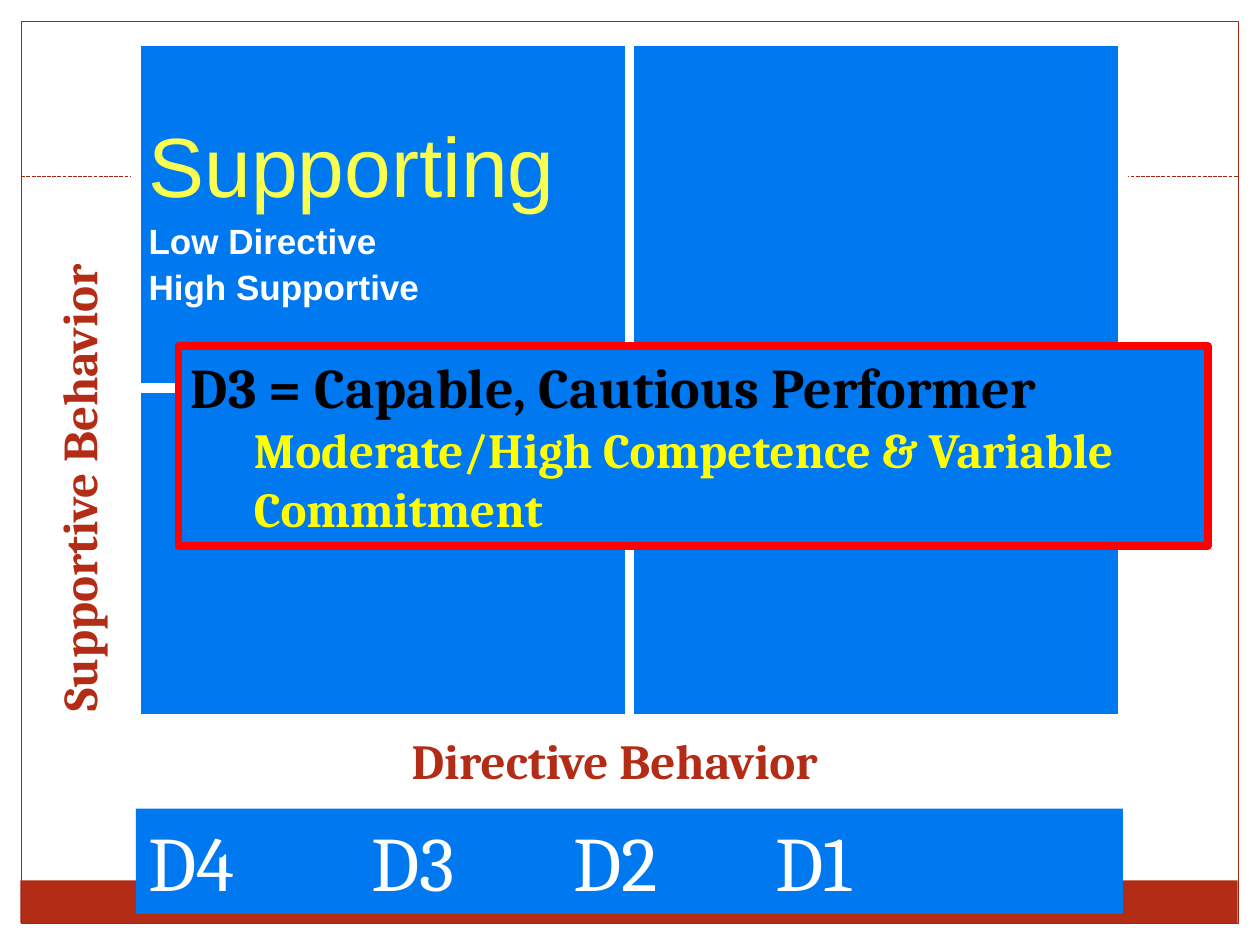
from lxml import etree
from pptx import Presentation
from pptx.dml.color import RGBColor
from pptx.enum.dml import MSO_LINE
from pptx.enum.shapes import MSO_CONNECTOR, MSO_SHAPE
from pptx.enum.text import MSO_ANCHOR, PP_ALIGN
from pptx.oxml.ns import qn
from pptx.util import Cm, Pt

WHITE = RGBColor(0xFF, 0xFF, 0xFF)
BLACK = RGBColor(0x00, 0x00, 0x00)
BLUE = RGBColor(0x00, 0x78, 0xF0)
RUST = RGBColor(0xB3, 0x2C, 0x16)
DARK_RUST = RGBColor(0x9E, 0x27, 0x13)
RED = RGBColor(0xFF, 0x00, 0x00)
YELLOW = RGBColor(0xFF, 0xFF, 0x00)
PALE_YELLOW = RGBColor(0xFA, 0xFE, 0x4E)

RECTANGLE = MSO_SHAPE.RECTANGLE
STRAIGHT = MSO_CONNECTOR.STRAIGHT
DASHED = MSO_LINE.SQUARE_DOT
LEFT = PP_ALIGN.LEFT
TOP = MSO_ANCHOR.TOP
MIDDLE = MSO_ANCHOR.MIDDLE

SERIF = "Cambria"
SANS = "Arial"
BLANK_LAYOUT = 6


class SlideBuilder:
    """Holds the style and the slide; positions and sizes are in centimetres."""

    def __init__(self, slide):
        self.slide = slide

    def set_text(self, paragraph, text, size, color, font=SERIF, bold=False):
        paragraph.text = text
        paragraph.alignment = LEFT
        paragraph.font.name = font
        paragraph.font.size = Pt(size)
        paragraph.font.bold = bold
        paragraph.font.color.rgb = color

    def rectangle(self, left, top, width, height, fill=None, line=None, line_width=0.75):
        shape = self.slide.shapes.add_shape(
            RECTANGLE, Cm(left), Cm(top), Cm(width), Cm(height))
        shape.shadow.inherit = False
        if fill is None:
            shape.fill.background()
        else:
            shape.fill.solid()
            shape.fill.fore_color.rgb = fill
        if line is None:
            shape.line.fill.background()
        else:
            shape.line.color.rgb = line
            shape.line.width = Pt(line_width)
        shape.text_frame.word_wrap = True
        shape.text_frame.vertical_anchor = TOP
        return shape

    def dashed_line(self, left, right, y, color):
        line = self.slide.shapes.add_connector(
            STRAIGHT, Cm(left), Cm(y), Cm(right), Cm(y))
        line.line.color.rgb = color
        line.line.width = Pt(0.75)
        line.line.dash_style = DASHED
        etree.SubElement(line._element.spPr, qn("a:effectLst"))

    def axis_label(self, text, left, top, width, height, rotation=0):
        box = self.slide.shapes.add_textbox(Cm(left), Cm(top), Cm(width), Cm(height))
        box.rotation = rotation
        box.text_frame.word_wrap = True
        self.set_text(box.text_frame.paragraphs[0], text, 28, RUST, bold=True)

    def grid(self, left, top, column_widths, row_heights, fill, border):
        table = self.slide.shapes.add_table(
            len(row_heights), len(column_widths), Cm(left), Cm(top),
            Cm(sum(column_widths)), Cm(sum(row_heights))).table
        table.first_row = False
        table.horz_banding = False
        for column, width in zip(table.columns, column_widths):
            column.width = Cm(width)
        for row, height in zip(table.rows, row_heights):
            row.height = Cm(height)
        for cell in table.iter_cells():
            self.cell_borders(cell, border, 6)
            cell.fill.solid()
            cell.fill.fore_color.rgb = fill
            cell.vertical_anchor = MIDDLE
        return table

    def cell_borders(self, cell, color, width):
        properties = cell._tc.get_or_add_tcPr()
        for side in ("a:lnL", "a:lnR", "a:lnT", "a:lnB"):
            border = etree.SubElement(properties, qn(side), w=str(Pt(width)))
            solid = etree.SubElement(border, qn("a:solidFill"))
            etree.SubElement(solid, qn("a:srgbClr"), val=str(color))

    def tab_stops(self, paragraph, positions):
        properties = paragraph._p.get_or_add_pPr()
        tabs = etree.SubElement(properties, qn("a:tabLst"))
        for position in positions:
            etree.SubElement(tabs, qn("a:tab"), pos=str(Cm(position)), algn="l")
        # The schema wants the tab list before the default run properties
        properties.insert(0, tabs)


def main():
    presentation = Presentation()
    presentation.slide_width = Cm(25.4)
    presentation.slide_height = Cm(19.05)
    slide = presentation.slides.add_slide(presentation.slide_layouts[BLANK_LAYOUT])
    builder = SlideBuilder(slide)

    # Page frame
    builder.rectangle(0.41, 17.75, 24.54, 0.86, fill=RUST)
    builder.rectangle(0.43, 0.43, 24.54, 18.19, line=DARK_RUST)
    builder.dashed_line(0.43, 24.97, 3.56, DARK_RUST)

    # Leadership style quadrants
    quadrants = builder.grid(2.74, 0.84, (9.95, 9.95), (6.98, 6.67), BLUE, WHITE)
    supporting = quadrants.cell(0, 0).text_frame
    builder.set_text(supporting.paragraphs[0], "Supporting", 48, PALE_YELLOW, SANS)
    for text in ("Low Directive", "High Supportive"):
        paragraph = supporting.add_paragraph()
        builder.set_text(paragraph, text, 20, WHITE, SANS, bold=True)
        paragraph.space_before = Pt(4)

    # Development level bar
    bar = builder.rectangle(2.74, 16.3, 19.9, 2.12, fill=BLUE)
    levels = bar.text_frame.paragraphs[0]
    builder.set_text(levels, "D4\tD3\tD2\tD1", 44, WHITE)
    builder.tab_stops(levels, (4.5, 8.57, 12.65))

    # Axis labels
    builder.axis_label("Directive Behavior", 8.05, 14.6, 11.43, 1.45)
    builder.axis_label("Supportive Behavior", -4.24, 8.05, 11.63, 1.45, rotation=270)

    # D3 callout
    callout = builder.rectangle(3.6, 6.98, 20.75, 4.02, BLUE, RED, 4.5).text_frame
    builder.set_text(callout.paragraphs[0], "D3 = Capable, Cautious Performer",
                     32, BLACK, bold=True)
    detail = callout.add_paragraph()
    builder.set_text(detail, "Moderate/High Competence & Variable Commitment",
                     28, YELLOW, bold=True)
    detail.level = 1
    indent = detail._p.get_or_add_pPr()
    indent.set("marL", str(Cm(1.27)))
    indent.set("indent", "0")

    presentation.save("out.pptx")


if __name__ == "__main__":
    main()
